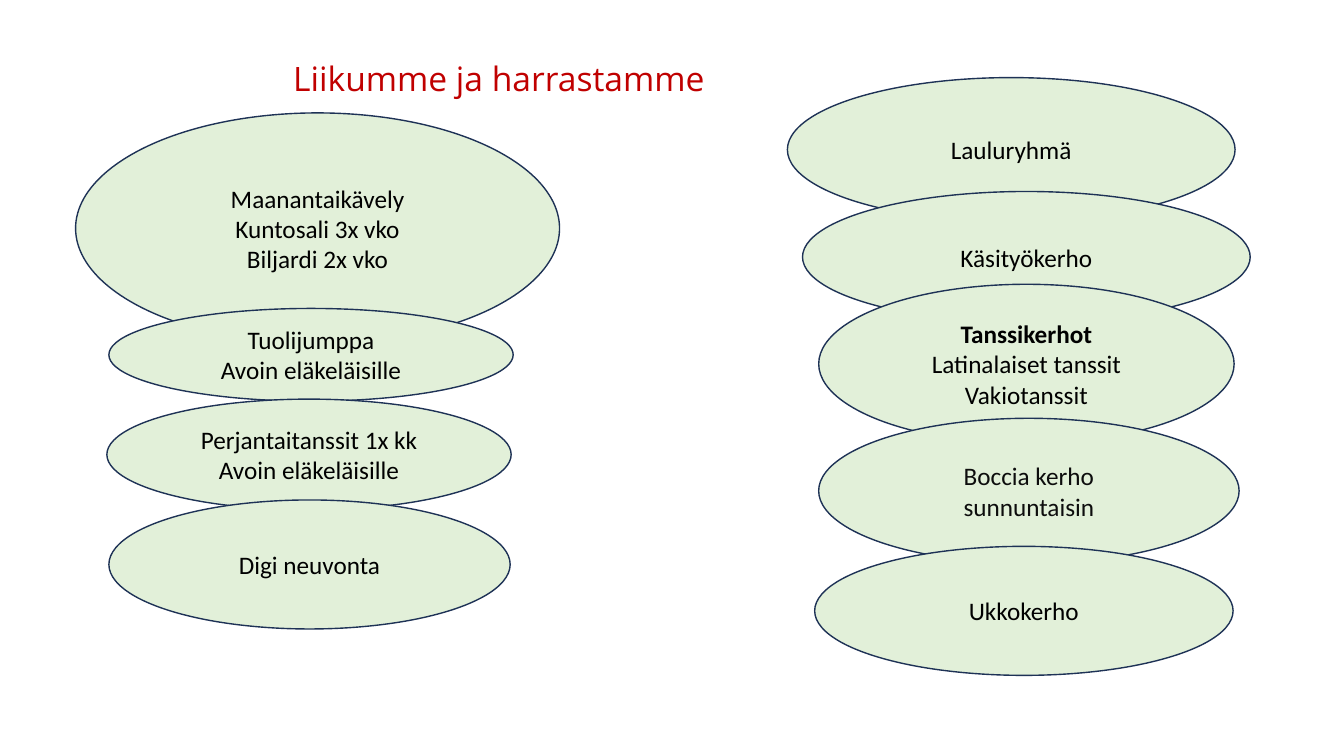
from pptx import Presentation
from pptx.dml.color import RGBColor
from pptx.enum.shapes import MSO_SHAPE
from pptx.enum.text import MSO_ANCHOR, PP_ALIGN
from pptx.util import Pt

OVAL = MSO_SHAPE.OVAL
MIDDLE = MSO_ANCHOR.MIDDLE
CENTER = PP_ALIGN.CENTER
EMU_PER_PX = 9144
COLORS = {
    "oval": "E2F0D9",
    "outline": "1E3256",
    "title": "C00000",
    "text": "000000",
    "soft text": "0D0D0D",
}

EXERCISE_BOX = (75, 112, 480, 512)
EXERCISE = [
    ((0, 0, 480, 229), ["Maanantaikävely", "Kuntosali 3x vko", "Biljardi 2x vko"], "text", False),
    ((33, 194, 401, 92), ["Tuolijumppa", "Avoin eläkeläisille"], "text", False),
    ((31, 284, 401, 110), ["Perjantaitanssit 1x kk", "Avoin eläkeläisille"], "text", False),
    ((33, 384, 398, 128), ["Digi neuvonta"], "text", False),
]
CLUBS_BOX = (781, 77, 459, 593)
CLUBS = [
    ((0, 0, 444, 143), ["Lauluryhmä"], "text", False),
    ((15, 113, 444, 130), ["Käsityökerho"], "text", False),
    ((31, 205, 412, 158), ["Tanssikerhot", "Latinalaiset tanssit", "Vakiotanssit"], "text", True),
    ((31, 338, 417, 144), ["Boccia kerho", "sunnuntaisin"], "soft text", False),
    ((27, 465, 415, 128), ["Ukkokerho"], "text", False),
]


def px(*lengths):
    """Turn pixel lengths into EMU."""
    return [length * EMU_PER_PX for length in lengths]


def color(name):
    """Look up a named colour."""
    return RGBColor.from_string(COLORS[name])


def add_run(paragraph, text, font, size, color_name, bold=False):
    """Add one formatted run to a paragraph."""
    run = paragraph.add_run()
    run.text = text
    run.font.name = font
    run.font.size = Pt(size)
    run.font.bold = bold
    run.font.color.rgb = color(color_name)


def add_title(slide, box):
    """Place the slide heading in its box."""
    frame = slide.shapes.add_textbox(*px(*box)).text_frame
    frame.word_wrap = True
    add_run(frame.paragraphs[0], "Liikumme ja harrastamme", "Open Sans", 24, "title")


def add_oval(slide, box, lines, color_name, has_heading):
    """Place one activity oval with centred lines."""
    shape = slide.shapes.add_shape(OVAL, *px(*box))
    shape.shadow.inherit = False
    shape.fill.solid()
    shape.fill.fore_color.rgb = color("oval")
    shape.line.color.rgb = color("outline")
    shape.line.width = Pt(1)
    frame = shape.text_frame
    frame.word_wrap = True
    frame.vertical_anchor = MIDDLE
    for index, line in enumerate(lines):
        paragraph = frame.add_paragraph() if index else frame.paragraphs[0]
        paragraph.alignment = CENTER
        add_run(paragraph, line, "Calibri", 18, color_name, has_heading and index == 0)


def add_column(slide, box, activities):
    """Stack overlapping ovals at offsets from the box corner."""
    left, top = box[:2]
    for (x, y, width, height), lines, color_name, has_heading in activities:
        add_oval(slide, (left + x, top + y, width, height), lines, color_name, has_heading)


def main():
    """Build and save the slide."""
    presentation = Presentation()
    presentation.slide_width, presentation.slide_height = px(1333, 750)
    slide = presentation.slides.add_slide(presentation.slide_layouts[6])
    add_column(slide, EXERCISE_BOX, EXERCISE)
    add_column(slide, CLUBS_BOX, CLUBS)
    add_title(slide, (281, 53, 549, 50))
    presentation.save("out.pptx")


if __name__ == "__main__":
    main()
